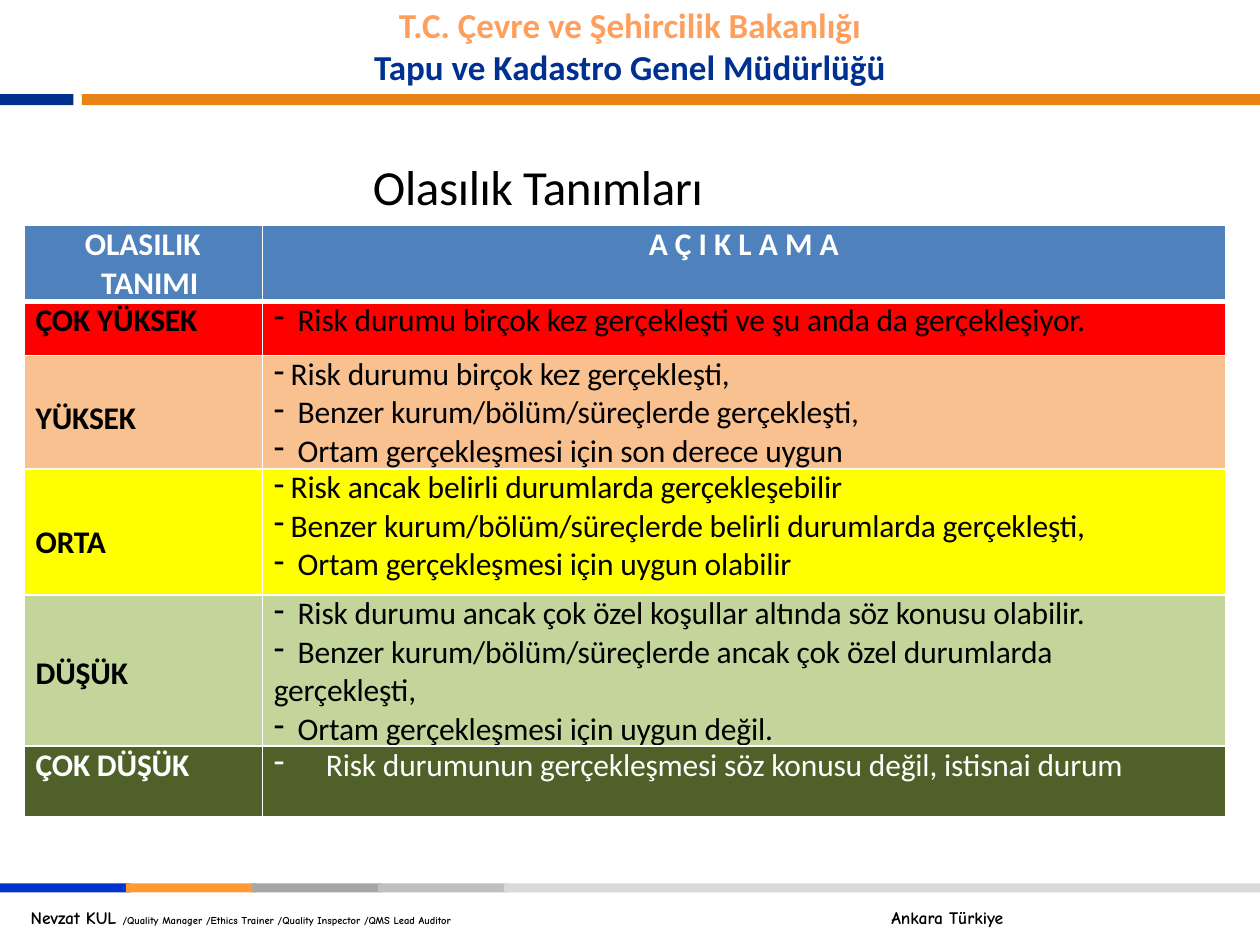
from lxml import etree
from pptx import Presentation
from pptx import util as u
from pptx.dml.color import RGBColor
from pptx.enum import shapes, text
from pptx.oxml.ns import qn


def paint(fill, color):
    fill.solid()
    fill.fore_color.rgb = RGBColor.from_string(color)


def style(run, size, color, bold=False, name="Calibri", spacing=0):
    run.font.size = u.Pt(size)
    run.font.bold = bold
    run.font.name = name
    paint(run.font.fill, color)
    if spacing:
        run.font._element.set("spc", str(spacing))


presentation = Presentation()
presentation.slide_width, presentation.slide_height = u.Cm(25.4), u.Cm(19.05)
slide = presentation.slides.add_slide(presentation.slide_layouts[6])

# Header and footer bars: left, top, width, height, colour
bars = [(0, 1.9, 1.48, 0.22, "002F8E"), (1.65, 1.9, 23.75, 0.22, "E88416")]
footer_colors = ["0033CC", "FF9933", "A6A6A6", "BFBFBF", "D9D9D9"]
for index, color in enumerate(footer_colors):
    width = 15.24 if index == 4 else 2.62
    bars.append((index * 2.54, 17.81, width, 0.18, color))
for left, top, width, height, color in bars:
    bar = slide.shapes.add_shape(shapes.MSO_SHAPE.RECTANGLE,
                                 u.Cm(left), u.Cm(top), u.Cm(width), u.Cm(height))
    bar.shadow.inherit = False
    paint(bar.fill, color)
    bar.line.fill.background()

# Institution heading
heading = slide.shapes.add_textbox(u.Cm(5.1), u.Cm(-0.05), u.Cm(15.2), u.Cm(1.96))
heading.text_frame.word_wrap = True
heading.text_frame.text = "T.C. Çevre ve Şehircilik Bakanlığı\nTapu ve Kadastro Genel Müdürlüğü"
for paragraph, color in zip(heading.text_frame.paragraphs, ["FF9F5D", "003192"]):
    paragraph.alignment = text.PP_ALIGN.CENTER
    style(paragraph.runs[0], 20, color, bold=True)

# Footer line, with a tab stop before the place name
footer = slide.shapes.add_textbox(0, u.Cm(18.16), u.Cm(25.4), u.Cm(0.69))
footer.text_frame.word_wrap = True
footer.text_frame.margin_left = u.Cm(0.62)
paragraph = footer.text_frame.paragraphs[0]
tabs = etree.SubElement(paragraph._p.get_or_add_pPr(), qn("a:tabLst"))
etree.SubElement(tabs, qn("a:tab"), pos=str(u.Cm(17.35)), algn="l")
for words, size in [("Nevzat KUL ", 10),
                    ("/Quality Manager /Ethics Trainer /Quality Inspector /QMS Lead Auditor", 6),
                    ("\tAnkara Türkiye", 10)]:
    run = paragraph.add_run()
    run.text = words
    style(run, size, "000000", bold=True, name="Comic Neue")

# Title
title = slide.shapes.add_textbox(u.Cm(7.52), u.Cm(3.15), u.Cm(7.09), u.Cm(1.27))
frame = title.text_frame
frame.word_wrap = True
frame.margin_left = frame.margin_right = frame.margin_top = frame.margin_bottom = 0
frame.text = "Olasılık Tanımları"
style(frame.paragraphs[0].runs[0], 28, "000000", spacing=-20)

# Probability rows: label, label offset, fill, text colour, height,
# and (text indent, wording) lines; an indent of EDGE means no bullet
EDGE, TIGHT, NORMAL, WIDE = 0.23, 0.57, 0.71, 1.28
levels = [
    ("ÇOK YÜKSEK", 0, "FF0000", "000000", 1.09,
     [(NORMAL, "Risk durumu birçok kez gerçekleşti ve şu anda da gerçekleşiyor.")]),
    ("YÜKSEK", 0.89, "F9C090", "000000", 2.18,
     [(TIGHT, "Risk durumu birçok kez gerçekleşti,"),
      (NORMAL, "Benzer kurum/bölüm/süreçlerde gerçekleşti,"),
      (NORMAL, "Ortam gerçekleşmesi için son derece uygun")]),
    ("ORTA", 1.11, "FFFF00", "000000", 2.54,
     [(TIGHT, "Risk ancak belirli durumlarda gerçekleşebilir"),
      (TIGHT, "Benzer kurum/bölüm/süreçlerde belirli durumlarda gerçekleşti,"),
      (NORMAL, "Ortam gerçekleşmesi için uygun olabilir")]),
    ("DÜŞÜK", 1.2, "C3D59B", "000000", 2.67,
     [(NORMAL, "Risk durumu ancak çok özel koşullar altında söz konusu olabilir."),
      (NORMAL, "Benzer kurum/bölüm/süreçlerde ancak çok özel durumlarda"),
      (EDGE, "gerçekleşti,"),
      (NORMAL, "Ortam gerçekleşmesi için uygun değil.")]),
    ("ÇOK DÜŞÜK", 0, "4F6128", "FFFFFF", 1.42,
     [(WIDE, "Risk durumunun gerçekleşmesi söz konusu değil, istisnai durum")]),
]
table = slide.shapes.add_table(6, 2, u.Cm(0.49), u.Cm(4.55), u.Cm(24.21), u.Cm(11.32)).table
table.horz_banding = False
table.columns[0].width, table.columns[1].width = u.Cm(4.8), u.Cm(19.41)

# Header row
table.rows[0].height = u.Cm(1.42)
for cell, words in zip(table.rows[0].cells, ["OLASILIK TANIMI", "A Ç I K L A M A"]):
    cell.text_frame.text = words
    paint(cell.fill, "4F81BC")
    style(cell.text_frame.paragraphs[0].runs[0], 18, "FFFFFF", bold=True)
properties = table.cell(0, 0).text_frame.paragraphs[0]._p.get_or_add_pPr()
properties.set("marL", str(u.Cm(1.55)))
properties.set("indent", str(u.Cm(-0.33)))
table.cell(0, 1).text_frame.paragraphs[0].alignment = text.PP_ALIGN.CENTER

# Level rows
for row, (label, offset, fill, color, height, lines) in enumerate(levels, 1):
    table.rows[row].height = u.Cm(height)
    for column, entries in enumerate([[(EDGE, label)], lines]):
        cell = table.cell(row, column)
        paint(cell.fill, fill)
        cell.text_frame.text = "\n".join(words for _, words in entries)
        for paragraph, (indent, _) in zip(cell.text_frame.paragraphs, entries):
            properties = paragraph._p.get_or_add_pPr()
            properties.set("marL", str(u.Cm(indent)))
            properties.set("indent", str(u.Cm(EDGE - indent)))
            if indent > EDGE:
                etree.SubElement(properties, qn("a:buChar"), char="-")
            style(paragraph.runs[0], 18, color, bold=column == 0, spacing=-10)

# Cell margins and white borders, thicker under the header
for row in range(6):
    for column in range(2):
        cell = table.cell(row, column)
        cell.margin_left = cell.margin_right = cell.margin_bottom = 0
        cell.margin_top = u.Cm(levels[row - 1][1] if row and column == 0 else 0)
        properties = cell._tc.get_or_add_tcPr()
        for position, side in enumerate(["lnL", "lnR", "lnT", "lnB"]):
            thick = (row, side) in [(0, "lnB"), (1, "lnT")]
            border = etree.Element(qn("a:" + side), w=str(u.Pt(3 if thick else 1)))
            solid = etree.SubElement(border, qn("a:solidFill"))
            etree.SubElement(solid, qn("a:srgbClr"), val="FFFFFF")
            properties.insert(position, border)

presentation.save("out.pptx")
